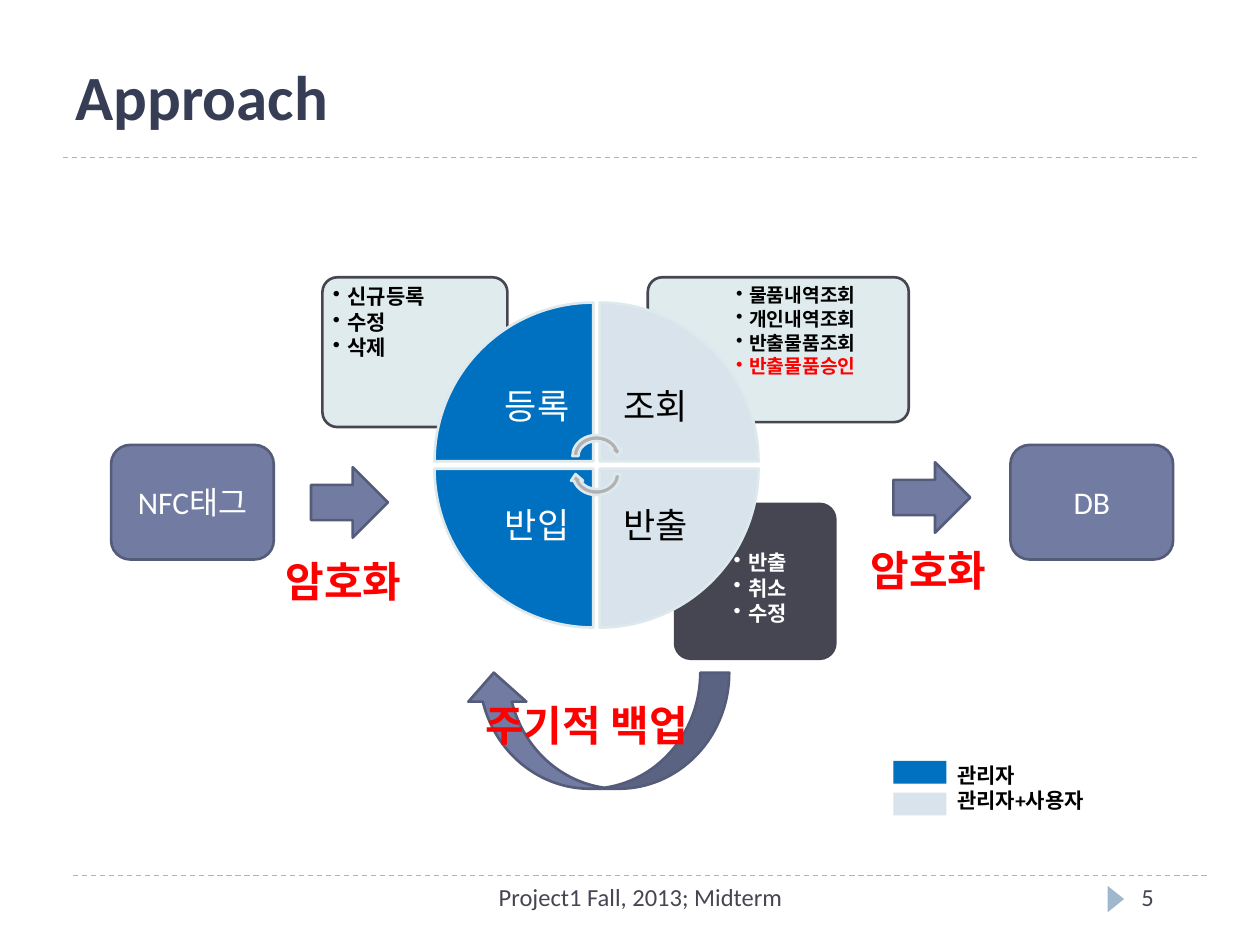
from dataclasses import dataclass

from lxml.etree import SubElement
from pptx import Presentation
from pptx.dml.color import RGBColor
from pptx.enum.dml import MSO_LINE
from pptx.enum.shapes import MSO_CONNECTOR, MSO_SHAPE
from pptx.enum.text import MSO_ANCHOR, MSO_AUTO_SIZE, PP_ALIGN
from pptx.oxml.ns import qn
from pptx.util import Cm, Pt


@dataclass(frozen=True)
class Theme:
    font: str = "Calibri"
    title: str = "373D54"
    dark: str = "464653"
    rule: str = "9FB8CD"
    pale: str = "DDE9EC"
    admin: str = "0070C0"
    shared: str = "D9E3EB"
    cycle: str = "B1B1B3"
    node: str = "727CA3"
    node_edge: str = "545C79"
    alert: str = "FF0000"
    black: str = "000000"
    white: str = "FFFFFF"
    title_size: int = 36
    label_size: int = 24
    wedge_size: int = 20
    node_size: int = 18
    footer_size: int = 14
    list_size: int = 12
    small_size: int = 11


theme = Theme()
prs = Presentation()
prs.slide_width, prs.slide_height = Cm(25.4), Cm(19.05)
slide = prs.slides.add_slide(prs.slide_layouts[5])


def add_block(kind, box, fill, edge=None, rotation=0):
    block = slide.shapes.add_shape(kind, *map(Cm, box))
    block.shadow.inherit = False
    block.rotation = rotation
    block.fill.solid()
    block.fill.fore_color.rgb = RGBColor.from_string(fill)
    if edge:
        block.line.color.rgb = RGBColor.from_string(edge)
        block.line.width = Pt(1.5)
    else:
        block.line.fill.background()
    return block


def write(holder, lines, size, color, bold=False, align=PP_ALIGN.LEFT,
          anchor=MSO_ANCHOR.TOP, wrap=True, inset=None, bullet_indent=None):
    frame = holder.text_frame
    frame.word_wrap = wrap
    frame.auto_size = MSO_AUTO_SIZE.NONE if wrap else MSO_AUTO_SIZE.SHAPE_TO_FIT_TEXT
    frame.vertical_anchor = anchor
    if inset is not None:
        frame.margin_left = frame.margin_right = Cm(inset)
        frame.margin_top = frame.margin_bottom = Cm(inset)
    for index, line in enumerate(lines):
        paragraph = frame.paragraphs[0] if index == 0 else frame.add_paragraph()
        paragraph.alignment = align
        if bullet_indent:
            paragraph.level = 1
            paragraph.line_spacing = 0.9
            paragraph.space_after = Pt(size * 0.15)
            properties = paragraph._p.get_or_add_pPr()
            properties.set("marL", str(Cm(bullet_indent)))
            properties.set("indent", str(-Cm(bullet_indent)))
            SubElement(properties, qn("a:buChar")).set("char", "•")
        run = paragraph.add_run()
        run.text = line
        run.font.name = theme.font
        run.font.size = Pt(size)
        run.font.bold = bold
        run.font.color.rgb = RGBColor.from_string(color)
    return frame


for left, top in ((1.47, 17.65), (1.27, 3.18)):
    rule = slide.shapes.add_connector(
        MSO_CONNECTOR.STRAIGHT, Cm(left), Cm(top), Cm(left + 22.86), Cm(top))
    rule.line.color.rgb = RGBColor.from_string(theme.rule)
    rule.line.width = Pt(0.75)
    rule.line.dash_style = MSO_LINE.DASH
    SubElement(rule._element.spPr, qn("a:effectLst"))

add_block(MSO_SHAPE.ISOSCELES_TRIANGLE, (22.23, 17.96, 0.53, 0.33), theme.rule, rotation=90)

title = slide.shapes.title
title.left, title.top, title.width, title.height = Cm(1.27), Cm(1.02), Cm(22.86), Cm(1.8)
write(title, ["Approach"], theme.title_size, theme.title, bold=True, anchor=MSO_ANCHOR.BOTTOM)

for text, left, width, align in (
    ("Project1 Fall, 2013; Midterm", 8.05, 9.73, PP_ALIGN.CENTER),
    ("5", 22.76, 1.9, PP_ALIGN.LEFT),
):
    footer = slide.shapes.add_textbox(Cm(left), Cm(17.65), Cm(width), Cm(1.02))
    write(footer, [text], theme.footer_size, theme.dark, align=align)

for card_box, list_box, tasks, fill, color, size, indent in (
    ((13.61, 10.16, 3.23, 3.12), (14.66, 11, 2.13, 2.21),
     ["반출", "취소", "수정"], theme.dark, theme.white, theme.list_size, 0.3),
    ((13.06, 5.59, 5.26, 2.92), (14.71, 5.64, 3.56, 2.06),
     ["물품내역조회", "개인내역조회", "반출물품조회", "반출물품승인"],
     theme.pale, theme.black, theme.small_size, 0.26),
    ((6.5, 5.59, 3.73, 3.02), (6.58, 5.64, 2.49, 2.13),
     ["신규등록", "수정", "삭제"], theme.pale, theme.black, theme.list_size, 0.3),
):
    card = add_block(MSO_SHAPE.ROUNDED_RECTANGLE, card_box, fill, theme.dark)
    card.adjustments[0] = 0.1
    if fill == theme.pale:
        tint = card._element.spPr.find(qn("a:solidFill"))[0]
        SubElement(tint, qn("a:alpha")).set("val", "90000")
    task_list = slide.shapes.add_textbox(*map(Cm, list_box))
    frame = write(task_list, tasks, size, color, bold=True, inset=0.13, bullet_indent=indent)
    for paragraph in frame.paragraphs:
        if paragraph.text == "반출물품승인":
            paragraph.runs[0].font.color.rgb = RGBColor.from_string(theme.alert)

wedge_size, wedge_text_size = 3.2, 2.26
for step, column, row, rotation in (
    ("등록", 0, 0, 0), ("조회", 1, 0, 90), ("반출", 1, 1, 180), ("반입", 0, 1, 270),
):
    left, top = 8.76 + 3.33 * column, 6.1 + 3.35 * row
    fill, color = ((theme.admin, theme.white), (theme.shared, theme.black))[column]
    add_block(MSO_SHAPE.PIE_WEDGE, (left, top, wedge_size, wedge_size),
              fill, theme.pale, rotation)
    inward = wedge_size - wedge_text_size
    step_name = slide.shapes.add_textbox(
        Cm(left + inward * (1 - column)), Cm(top + inward * (1 - row)),
        Cm(wedge_text_size), Cm(wedge_text_size))
    write(step_name, [step], theme.wedge_size, color, align=PP_ALIGN.CENTER,
          anchor=MSO_ANCHOR.MIDDLE, inset=0.4)

for top, rotation in ((8.71, 0), (9.07, 180)):
    add_block(MSO_SHAPE.CIRCULAR_ARROW, (11.48, top, 1.09, 0.97),
              theme.cycle, theme.pale, rotation)

legend = slide.shapes.add_textbox(Cm(19.05), Cm(15.24), Cm(3.78), Cm(1.27))
write(legend, ["관리자", "관리자+사용자"], theme.list_size, theme.black, bold=True)
for top, fill in ((15.34, theme.admin), (15.98, theme.shared)):
    add_block(MSO_SHAPE.RECTANGLE, (18.01, top, 1.07, 0.46), fill)

for left, top in ((6.27, 9.42), (18.01, 9.32)):
    add_block(MSO_SHAPE.RIGHT_ARROW, (left, top, 1.55, 1.42), theme.node, theme.node_edge)

for name, left in (("NFC태그", 2.24), ("DB", 20.37)):
    node = add_block(MSO_SHAPE.ROUNDED_RECTANGLE, (left, 8.97, 3.28, 2.31),
                     theme.node, theme.node_edge)
    write(node, [name], theme.node_size, theme.white, align=PP_ALIGN.CENTER,
          anchor=MSO_ANCHOR.MIDDLE)

add_block(MSO_SHAPE.CURVED_DOWN_ARROW, (9.37, 13.56, 5.33, 2.34),
          theme.node, theme.node_edge, 180)

for text, left, top, width in (
    ("암호화", 5.51, 11.07, 3.07),
    ("암호화", 17.3, 10.85, 3.07),
    ("주기적 백업", 9.53, 13.97, 5.03),
):
    label = slide.shapes.add_textbox(Cm(left), Cm(top), Cm(width), Cm(1.27))
    frame = write(label, [text], theme.label_size, theme.alert, bold=True, wrap=False)
    run_properties = frame.paragraphs[0].runs[0]._r.get_or_add_rPr()
    outline = SubElement(run_properties, qn("a:ln"))
    outline.set("w", str(Pt(0.75)))
    outline_fill = SubElement(outline, qn("a:solidFill"))
    SubElement(outline_fill, qn("a:srgbClr")).set("val", theme.white)
    run_properties.insert(0, outline)

prs.save("out.pptx")
